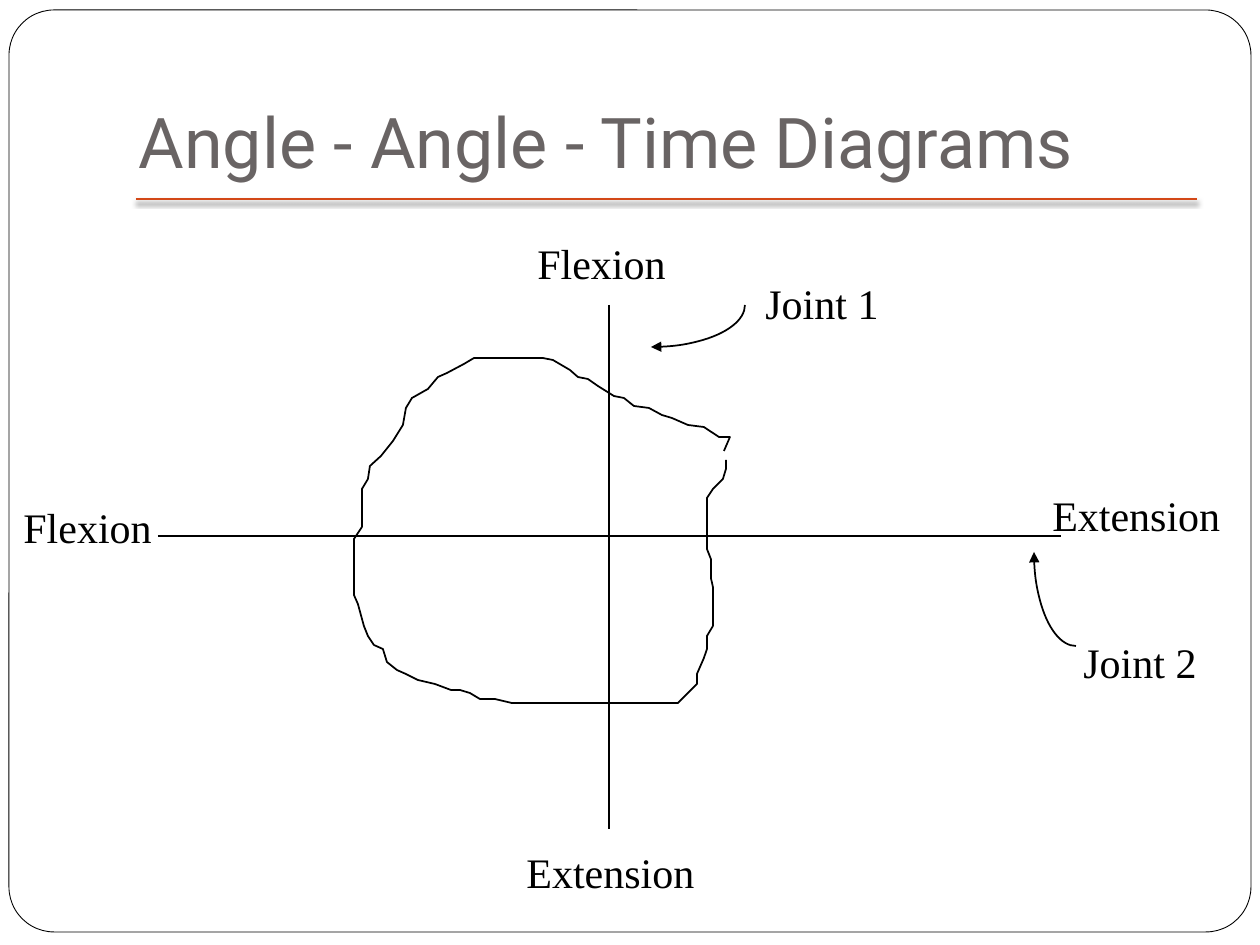
from lxml.etree import SubElement
from pptx import Presentation
from pptx.dml.color import RGBColor
from pptx.enum.shapes import MSO_CONNECTOR, MSO_SHAPE
from pptx.enum.text import MSO_ANCHOR, MSO_AUTO_SIZE, PP_ALIGN
from pptx.oxml import parse_xml
from pptx.oxml.ns import nsdecls, qn
from pptx.util import Emu, Pt

SCALE = 914400 / 126
BLACK, WHITE, GREY, RUST = "000000", "FFFFFF", "696464", "D34817"

# Angle curve, in px from the corner of its own box
CURVE = [
    (370, 93), (376, 79), (365, 79), (350, 69), (334, 67), (318, 60),
    (308, 57), (295, 50), (280, 48), (270, 40), (260, 38), (244, 28),
    (234, 21), (224, 19), (216, 12), (199, 2), (189, 0), (120, 0),
    (110, 6), (93, 15), (84, 19), (74, 31), (58, 40), (52, 50),
    (49, 67), (39, 83), (27, 98), (16, 108), (14, 121), (8, 131),
    (8, 169), (0, 181), (0, 237), (4, 246), (10, 268), (14, 278),
    (20, 287), (29, 291), (33, 304), (43, 312), (52, 316), (64, 322),
    (81, 326), (97, 332), (106, 332), (116, 335), (126, 341), (141, 341),
    (158, 345), (324, 345), (334, 335), (343, 326), (343, 316), (350, 300),
    (353, 291), (353, 278), (359, 268), (359, 229), (357, 220), (357, 201),
    (353, 191), (353, 140), (359, 131), (369, 121), (372, 111), (372, 102),
]


def px(n):
    return Emu(round(n * SCALE))


def color(text):
    return RGBColor.from_string(text)


def ink(shape, tone=BLACK, width=1):
    shape.line.color.rgb = color(tone)
    shape.line.width = Pt(width)


def rule(slide, x1, y1, x2, y2, tone=BLACK):
    line = slide.shapes.add_connector(
        MSO_CONNECTOR.STRAIGHT, px(x1), px(y1), px(x2), px(y2))
    ink(line, tone)
    return SubElement(line._element.spPr, qn("a:effectLst"))


def label(slide, text, x, y, w, wrap=True):
    frame = slide.shapes.add_textbox(px(x), px(y), px(w), px(63)).text_frame
    frame.word_wrap = wrap
    frame.auto_size = MSO_AUTO_SIZE.SHAPE_TO_FIT_TEXT
    para = frame.paragraphs[0]
    para.text = text
    style(para, "Times New Roman", 24, BLACK)


def style(para, face, size, tone):
    para.font.name = face
    para.font.size = Pt(size)
    para.font.color.rgb = color(tone)


def arrow(slide, x, y, rx, ry, start):
    """Quarter ellipse about (x, y), clockwise from start degrees."""
    arc = slide.shapes.add_shape(
        MSO_SHAPE.ARC, px(x - rx), px(y - ry), px(2 * rx), px(2 * ry))
    arc.adjustments[0] = start * 0.6
    arc.adjustments[1] = (start + 90) * 0.6
    arc.shadow.inherit = False
    arc.fill.background()
    ink(arc)
    SubElement(arc.line._get_or_add_ln(), qn("a:tailEnd"), type="triangle")


def border(slide, x, y, w, h):
    box = slide.shapes.add_shape(
        MSO_SHAPE.ROUNDED_RECTANGLE, px(x), px(y), px(w), px(h))
    box.adjustments[0] = 0.049
    box.shadow.inherit = False
    box.fill.solid()
    box.fill.fore_color.rgb = color(WHITE)
    ink(box, width=0.5)
    slide.shapes._spTree.insert(2, box._element)  # send to back


def heading(slide, x, y, w, h):
    title = slide.shapes.title
    title.left, title.top, title.width, title.height = map(px, (x, y, w, h))
    frame = title.text_frame
    frame.vertical_anchor = MSO_ANCHOR.BOTTOM
    frame.margin_left = frame.margin_right = frame.margin_bottom = Pt(7.2)
    frame.margin_top = Pt(3.6)
    para = frame.paragraphs[0]
    para.text = "Angle - Angle - Time Diagrams"
    para.alignment = PP_ALIGN.LEFT
    style(para, "Roboto", 40, GREY)
    # Underline with a soft shadow
    effect = rule(slide, x + 10, y + h + 4, x + w, y + h + 4, RUST)
    effect.append(parse_xml(
        f'<a:outerShdw {nsdecls("a")} blurRad="38100" dist="25400" '
        'dir="5400000" rotWithShape="0"><a:srgbClr val="000000">'
        '<a:alpha val="50000"/></a:srgbClr></a:outerShdw>'))


def diagram(slide, x, y, w, h):
    # Axes
    mid, low = x + w // 2, y + 231
    rule(slide, mid, y, mid, y + h)
    rule(slide, x, low, x + w, low)
    # Axis ends
    label(slide, "Flexion", mid - 84, y - 74, 200)
    label(slide, "Extension", mid - 95, y + h + 11, 243)
    label(slide, "Flexion", x - 147, low - 41, 243)
    label(slide, "Extension", x + w - 21, low - 53, 212)
    # Joint names and their arrows
    label(slide, "Joint 1", mid + 144, y - 34, 139, wrap=False)
    label(slide, "Joint 2", x + w + 10, low + 94, 149)
    arrow(slide, mid + 42, y, 94, 42, 0)
    arrow(slide, x + w + 15, low + 16, 42, 94, 90)
    # Angle curve
    pen = slide.shapes.build_freeform(*CURVE[0], scale=SCALE)
    pen.add_line_segments(CURVE[1:], close=False)
    curve = pen.convert_to_shape(px(x + 196), px(y + 53))
    curve.shadow.inherit = False
    curve.fill.background()
    ink(curve)


def main():
    deck = Presentation()
    deck.slide_width, deck.slide_height = px(1260), px(945)
    slide = deck.slides.add_slide(deck.slide_layouts[5])
    border(slide, 9, 10, 1242, 922)
    heading(slide, 126, 38, 1071, 157)
    diagram(slide, 158, 305, 903, 524)
    deck.save("out.pptx")


if __name__ == "__main__":
    main()
